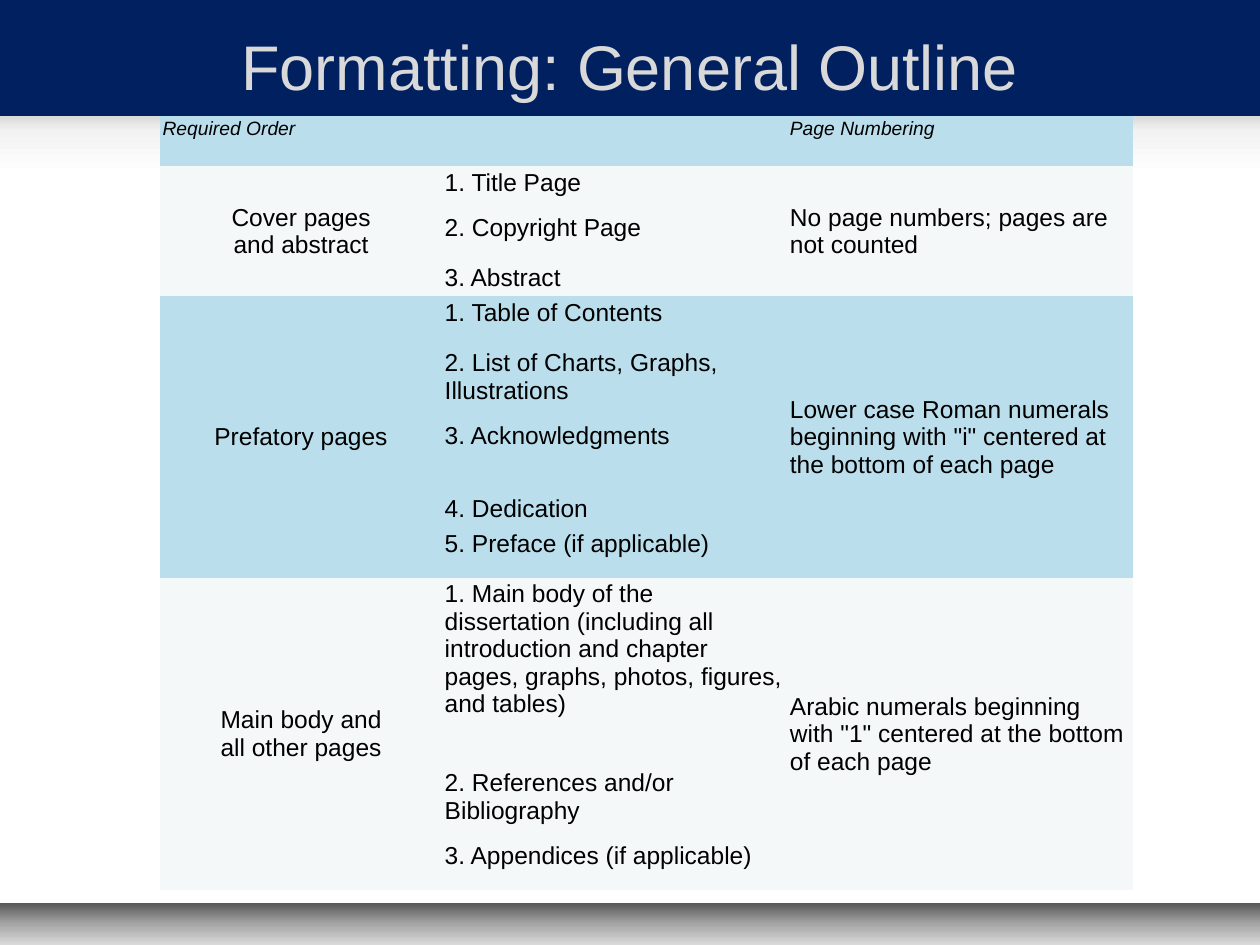
from copy import deepcopy
from dataclasses import dataclass

from lxml import etree
from pptx import Presentation
from pptx.dml.color import RGBColor
from pptx.enum.shapes import MSO_SHAPE
from pptx.enum.text import MSO_ANCHOR, PP_ALIGN
from pptx.oxml.ns import qn
from pptx.util import Inches, Pt

RECTANGLE = MSO_SHAPE.RECTANGLE
MIDDLE, TOP = MSO_ANCHOR.MIDDLE, MSO_ANCHOR.TOP
LEFT, CENTER = PP_ALIGN.LEFT, PP_ALIGN.CENTER
FONT = "Arial"
NO_GRID_STYLE = "{2D5ABB26-0587-4C30-8999-92F81FD0307C}"
BLUE, PALE = "BADEEC", "F4F8F8"
CELL_MARGIN = Inches(0.02)
COLUMN_WIDTHS = (2.24, 2.74, 2.74)
HEADER_HEIGHT = 0.4

HEADER_FORMAT = {"size": Pt(11), "italic": True}
BODY_FORMAT = {"size": Pt(14), "italic": False}
TITLE_FORMAT = {"size": Pt(36)}
CELL_FORMAT = {
    "margin_left": CELL_MARGIN,
    "margin_right": CELL_MARGIN,
    "margin_top": CELL_MARGIN,
    "margin_bottom": CELL_MARGIN,
}
TABLE_FORMAT = {"first_row": False, "horz_banding": False}


@dataclass
class Band:
    top: float
    height: float
    colors: tuple[str, ...]


@dataclass
class Item:
    text: str
    height: float


@dataclass
class Section:
    name: str
    numbering: str
    color: str
    items: tuple[Item, ...]


BANDS = (
    Band(7.17, 0.33, ("595959", "A6A6A6", "D9D9D9")),
    Band(0.7, 0.68, ("A6A6A6", "F2F2F2", "FFFFFF")),
    Band(0, 0.92, ("002060",)),
)

SECTIONS = (
    Section("Cover pages\nand abstract", "No page numbers; pages are not counted", PALE, (
        Item("1. Title Page", 0.36),
        Item("2. Copyright Page", 0.4),
        Item("3. Abstract", 0.26),
    )),
    Section(
        "Prefatory pages",
        'Lower case Roman numerals beginning with "i" centered at the bottom of each page',
        BLUE,
        (
            Item("1. Table of Contents", 0.4),
            Item("2. List of Charts, Graphs, Illustrations", 0.58),
            Item("3. Acknowledgments", 0.58),
            Item("4. Dedication", 0.26),
            Item("5. Preface (if applicable)", 0.4),
        ),
    ),
    Section(
        "Main body and\nall other pages",
        'Arabic numerals beginning with "1" centered at the bottom of each page',
        PALE,
        (
            Item("1. Main body of the dissertation (including all introduction and "
                 "chapter pages, graphs, photos, figures, and tables)", 1.5),
            Item("2. References and/or Bibliography", 0.58),
            Item("3. Appendices (if applicable)", 0.4),
        ),
    ),
)


def rgb(code: str) -> RGBColor:
    return RGBColor.from_string(code)


def apply_format(target, values: dict) -> None:
    for name, value in values.items():
        setattr(target, name, value)


def write(frame, text: str, values: dict, align=LEFT, color: str = "000000") -> None:
    paragraph = frame.paragraphs[0]
    paragraph.text = text
    paragraph.alignment = align
    for run in paragraph.runs:
        apply_format(run.font, {"name": FONT, **values})
        run.font.color.rgb = rgb(color)
    for line_break in paragraph._p.findall(qn("a:br")):
        line_break.append(deepcopy(paragraph.runs[0]._r.rPr))


def draw_band(slide, band: Band) -> None:
    bar = slide.shapes.add_shape(
        RECTANGLE, Inches(0), Inches(band.top), Inches(10), Inches(band.height))
    bar.shadow.inherit = False
    bar.line.fill.background()
    if len(band.colors) == 1:
        bar.fill.solid()
        bar.fill.fore_color.rgb = rgb(band.colors[0])
        return
    bar.fill.gradient()
    bar.fill.gradient_angle = 270
    stops = bar._element.spPr.find(qn("a:gradFill")).find(qn("a:gsLst"))
    for stop in list(stops):
        stops.remove(stop)
    for index, code in enumerate(band.colors):
        position = round(100000 * index / (len(band.colors) - 1))
        stop = etree.SubElement(stops, qn("a:gs"), pos=str(position))
        etree.SubElement(stop, qn("a:srgbClr"), val=code)


def draw_title(slide, text: str) -> None:
    title = slide.shapes.add_textbox(Inches(0.5), Inches(0.12), Inches(9), Inches(0.8))
    apply_format(title.text_frame, {"word_wrap": True, "vertical_anchor": MIDDLE})
    write(title.text_frame, text, TITLE_FORMAT, CENTER, "D9D9D9")


def fill_cell(cell, text: str, values: dict, anchor=TOP, align=LEFT) -> None:
    cell.vertical_anchor = anchor
    write(cell.text_frame, text, values, align)


def paint_row(table, row: int, height: float, color: str) -> None:
    table.rows[row].height = Inches(height)
    for cell in table.rows[row].cells:
        apply_format(cell, CELL_FORMAT)
        cell.fill.solid()
        cell.fill.fore_color.rgb = rgb(color)


def draw_section(table, first: int, section: Section) -> None:
    last = first + len(section.items) - 1
    for row, item in enumerate(section.items, first):
        paint_row(table, row, item.height, section.color)
        fill_cell(table.cell(row, 1), item.text, BODY_FORMAT)
    for column, text, align in ((0, section.name, CENTER), (2, section.numbering, LEFT)):
        table.cell(first, column).merge(table.cell(last, column))
        fill_cell(table.cell(first, column), text, BODY_FORMAT, MIDDLE, align)


def draw_outline(slide, sections: tuple[Section, ...]) -> None:
    heights = [HEADER_HEIGHT] + [item.height for part in sections for item in part.items]
    frame = slide.shapes.add_table(
        len(heights), len(COLUMN_WIDTHS), Inches(1.27), Inches(0.92),
        Inches(sum(COLUMN_WIDTHS)), Inches(sum(heights)))
    table = frame.table
    apply_format(table, TABLE_FORMAT)
    table._tbl.tblPr.find(qn("a:tableStyleId")).text = NO_GRID_STYLE
    for column, width in zip(table.columns, COLUMN_WIDTHS):
        column.width = Inches(width)
    paint_row(table, 0, HEADER_HEIGHT, BLUE)
    table.cell(0, 0).merge(table.cell(0, 1))
    fill_cell(table.cell(0, 0), "Required Order", HEADER_FORMAT)
    fill_cell(table.cell(0, 2), "Page Numbering", HEADER_FORMAT)
    first = 1
    for section in sections:
        draw_section(table, first, section)
        first += len(section.items)


def main() -> None:
    deck = Presentation()
    deck.slide_width, deck.slide_height = Inches(10), Inches(7.5)
    slide = deck.slides.add_slide(deck.slide_layouts[6])
    for band in BANDS:
        draw_band(slide, band)
    draw_title(slide, "Formatting: General Outline")
    draw_outline(slide, SECTIONS)
    deck.save("out.pptx")


if __name__ == "__main__":
    main()
